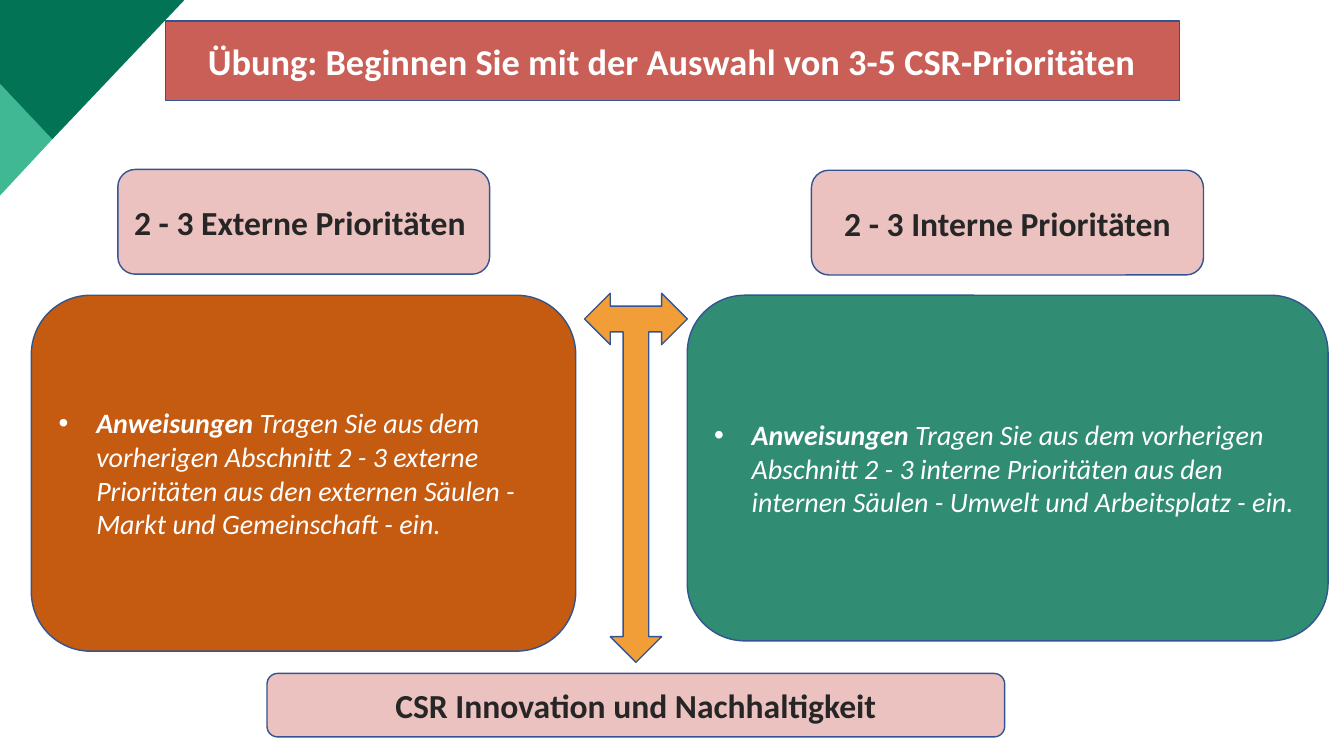
from lxml.etree import SubElement
from pptx import Presentation
from pptx.dml.color import RGBColor
from pptx.enum.shapes import MSO_SHAPE as Shape
from pptx.enum.text import MSO_ANCHOR as Anchor, MSO_AUTO_SIZE as AutoSize, PP_ALIGN as Align
from pptx.oxml.ns import qn
from pptx.util import Cm, Pt

WHITE = RGBColor(0xFF, 0xFF, 0xFF)
INK = RGBColor(0x26, 0x26, 0x26)
OUTLINE = RGBColor(0x32, 0x54, 0x91)
RED = RGBColor(0xC9, 0x5F, 0x57)
PINK = RGBColor(0xEB, 0xC2, 0xBF)
ORANGE = RGBColor(0xC5, 0x5A, 0x11)
GREEN = RGBColor(0x30, 0x8C, 0x73)
AMBER = RGBColor(0xF2, 0x9E, 0x38)
MINT = RGBColor(0x40, 0xB8, 0x94)
FOREST = RGBColor(0x02, 0x73, 0x54)


def add_span(para, text, size=24, color=INK, bold=True, italic=False):
    """Append formatted text to a paragraph."""
    span = para.add_run()
    span.text = text
    font = span.font
    font.name, font.size = "Calibri", Pt(size)
    font.bold, font.italic = bold, italic
    font.color.rgb = color


class Page:
    """Hold the current slide and its shared style."""

    def __init__(self, deck):
        """Add a title-only slide to the deck."""
        self.slide = deck.slides.add_slide(deck.slide_layouts[5])
        self.shapes = self.slide.shapes

    def paint(self, box, fill):
        """Give a shape its fill and the common outline."""
        box.fill.solid()
        box.fill.fore_color.rgb = fill
        box.line.color.rgb = OUTLINE
        box.line.width = Pt(1)

    def first_para(self, box, align):
        """Prepare a text frame and return its first paragraph."""
        frame = box.text_frame
        frame.word_wrap = True
        frame.auto_size = AutoSize.NONE
        frame.vertical_anchor = Anchor.MIDDLE
        para = frame.paragraphs[0]
        para.alignment = align
        return para

    def title(self, text, left, top, width, height):
        """Turn the title placeholder into a rounded banner."""
        box = self.shapes.title
        box.left, box.top, box.width, box.height = map(Cm, (left, top, width, height))
        outline = SubElement(box._element.spPr, qn("a:prstGeom"), prst="roundRect")
        SubElement(outline, qn("a:avLst"))
        self.paint(box, RED)
        add_span(self.first_para(box, Align.CENTER), text, size=26, color=WHITE)

    def shape(self, kind, fill, left, top, width, height):
        """Add a preset shape in the common style."""
        box = self.shapes.add_shape(kind, *map(Cm, (left, top, width, height)))
        box.shadow.inherit = False
        self.paint(box, fill)
        return box

    def label(self, text, *place):
        """Add a pink rounded label."""
        box = self.shape(Shape.ROUNDED_RECTANGLE, PINK, *place)
        add_span(self.first_para(box, Align.CENTER), text)

    def panel(self, text, fill, *place):
        """Add a rounded panel with bulleted instructions."""
        box = self.shape(Shape.ROUNDED_RECTANGLE, fill, *place)
        para = self.first_para(box, Align.LEFT)
        properties = para._p.get_or_add_pPr()
        indent = Cm(0.95)
        properties.set("marL", str(indent))
        properties.set("indent", str(-indent))
        SubElement(properties, qn("a:buFont"), typeface="Arial")
        SubElement(properties, qn("a:buChar"), char="•")
        add_span(para, "Anweisungen ", size=20, color=WHITE, italic=True)
        add_span(para, text, size=20, color=WHITE, bold=False, italic=True)

    def polygon(self, fill, *points):
        """Add a filled polygon without an outline."""
        corners = [(Cm(x), Cm(y)) for x, y in points]
        builder = self.shapes.build_freeform(*corners[0])
        builder.add_line_segments(corners[1:], close=True)
        box = builder.convert_to_shape()
        box.shadow.inherit = False
        box.fill.solid()
        box.fill.fore_color.rgb = fill
        box.line.fill.background()


def main():
    """Build the exercise slide and save it."""
    deck = Presentation()
    deck.slide_width, deck.slide_height = Cm(33.87), Cm(19.05)
    page = Page(deck)
    page.polygon(MINT, (0, 2.11), (1.32, 3.51), (0, 4.93))
    page.polygon(FOREST, (0, 0), (4.65, 0), (1.32, 3.51), (0, 2.11))
    page.title("Übung: Beginnen Sie mit der Auswahl von 3-5 CSR-Prioritäten",
               4.17, 0.53, 25.55, 2.01)
    page.label("2 - 3 Externe Prioritäten ", 2.97, 4.27, 9.37, 2.64)
    page.label("2 - 3 Interne Prioritäten", 20.45, 4.29, 9.88, 2.64)
    page.panel("Tragen Sie aus dem vorherigen Abschnitt 2 - 3 externe Prioritäten "
               "aus den externen Säulen - Markt und Gemeinschaft - ein.",
               ORANGE, 0.79, 7.44, 13.72, 8.97)
    page.panel("Tragen Sie aus dem vorherigen Abschnitt 2 - 3 interne Prioritäten "
               "aus den internen Säulen - Umwelt und Arbeitsplatz - ein.",
               GREEN, 17.32, 7.44, 16.15, 8.71)
    arrow = page.shape(Shape.LEFT_RIGHT_UP_ARROW, AMBER, 14.73, 7.39, 2.59, 9.3)
    arrow.rotation = 180
    page.label("CSR Innovation und Nachhaltigkeit", 6.73, 16.97, 18.59, 1.6)
    deck.save("out.pptx")


if __name__ == "__main__":
    main()
